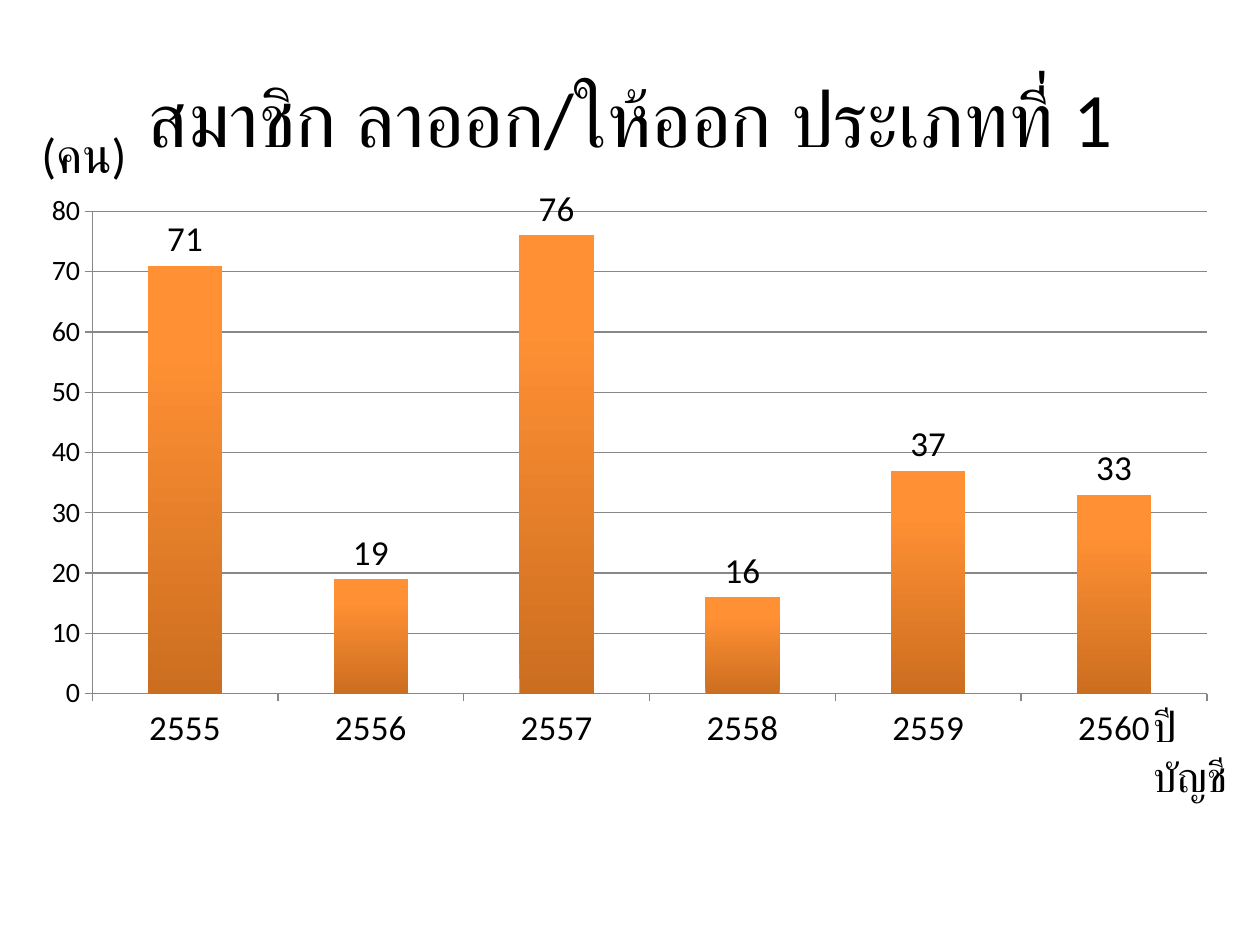
import copy
import pptx
import pptx.chart.data
import pptx.dml.color
import pptx.enum.chart
import pptx.enum.text
import pptx.util
from pptx.oxml.ns import qn

Inches = pptx.util.Inches
Pt = pptx.util.Pt
RGBColor = pptx.dml.color.RGBColor
ALIGN = pptx.enum.text.PP_ALIGN
ANCHOR = pptx.enum.text.MSO_ANCHOR
TICK = pptx.enum.chart.XL_TICK_MARK

BLACK = RGBColor(0x00, 0x00, 0x00)
GREY = RGBColor(0x87, 0x87, 0x87)
STOPS = [
    (0, RGBColor(0xCC, 0x6E, 0x20)),
    (0.8, RGBColor(0xFF, 0x90, 0x34)),
    (1, RGBColor(0xFF, 0x91, 0x36)),
]
FACE = "Calibri"
YEARS = ["2555", "2556", "2557", "2558", "2559", "2560"]
COUNTS = [71, 19, 76, 16, 37, 33]


def apply(item, values):
    for name, value in values.items():
        setattr(item, name, value)


def style(font, size):
    apply(font, {"name": FACE, "size": Pt(size)})
    font.color.rgb = BLACK


def add_text(slide, box, text, size, align=ALIGN.LEFT, anchor=ANCHOR.TOP):
    frame = slide.shapes.add_textbox(*map(Inches, box)).text_frame
    apply(frame, {"word_wrap": True, "vertical_anchor": anchor})
    para = frame.paragraphs[0]
    para.alignment = align
    run = para.add_run()
    run.text = text
    style(run.font, size)


def shade(series):
    fill = series.format.fill
    fill.gradient()
    fill.gradient_angle = 90
    # The default gradient has two stops; add a third
    stops = next(series._element.iter(qn("a:gsLst")))
    stops.append(copy.deepcopy(stops[-1]))
    for stop, (place, color) in zip(fill.gradient_stops, STOPS):
        stop.position = place
        stop.color.rgb = color


def add_bars(slide, box):
    data = pptx.chart.data.CategoryChartData()
    data.categories = YEARS
    data.add_series("Series 1", COUNTS)
    kind = pptx.enum.chart.XL_CHART_TYPE.COLUMN_CLUSTERED
    chart = slide.shapes.add_chart(kind, *map(Inches, box), data).chart
    apply(chart, {"has_legend": False, "has_title": False})
    style(chart.font, 10)

    # Axes and grid
    for axis, size in ((chart.category_axis, 20), (chart.value_axis, 16)):
        apply(axis, {"major_tick_mark": TICK.OUTSIDE,
                     "minor_tick_mark": TICK.NONE})
        style(axis.tick_labels.font, size)
        axis.format.line.color.rgb = GREY
    apply(chart.value_axis, {"minimum_scale": 0, "maximum_scale": 80,
                             "major_unit": 10, "has_major_gridlines": True})
    chart.value_axis.major_gridlines.format.line.color.rgb = GREY

    # Columns and their labels
    plot = chart.plots[0]
    apply(plot, {"gap_width": 150, "vary_by_categories": False,
                 "has_data_labels": True})
    shade(plot.series[0])
    apply(plot.data_labels, {
        "show_value": True,
        "position": pptx.enum.chart.XL_LABEL_POSITION.OUTSIDE_END})
    style(plot.data_labels.font, 20)


def add_chart_page(deck, box):
    left, top, width, height = box
    slide = deck.slides.add_slide(deck.slide_layouts[6])
    # Title
    add_text(slide, (left + 0.5, top + 0.3, width - 1, 1.25),
             "สมาชิก ลาออก/ให้ออก ประเภทที่ 1", 44, ALIGN.CENTER, ANCHOR.MIDDLE)
    # Chart
    add_bars(slide, (left + 0.22, top + 1.45, width - 0.45, 4.59))
    # Axis captions
    add_text(slide, (left + width - 0.94, top + 5.51, 0.94, 0.5), "ปีบัญชี", 24)
    add_text(slide, (left + 0.23, top + 0.94, 1.48, 0.57), "(คน)", 28)


def main():
    deck = pptx.Presentation()
    apply(deck, {"slide_width": Inches(10), "slide_height": Inches(7.5)})
    add_chart_page(deck, (0, 0, 10, 7.5))
    deck.save("out.pptx")


if __name__ == "__main__":
    main()
